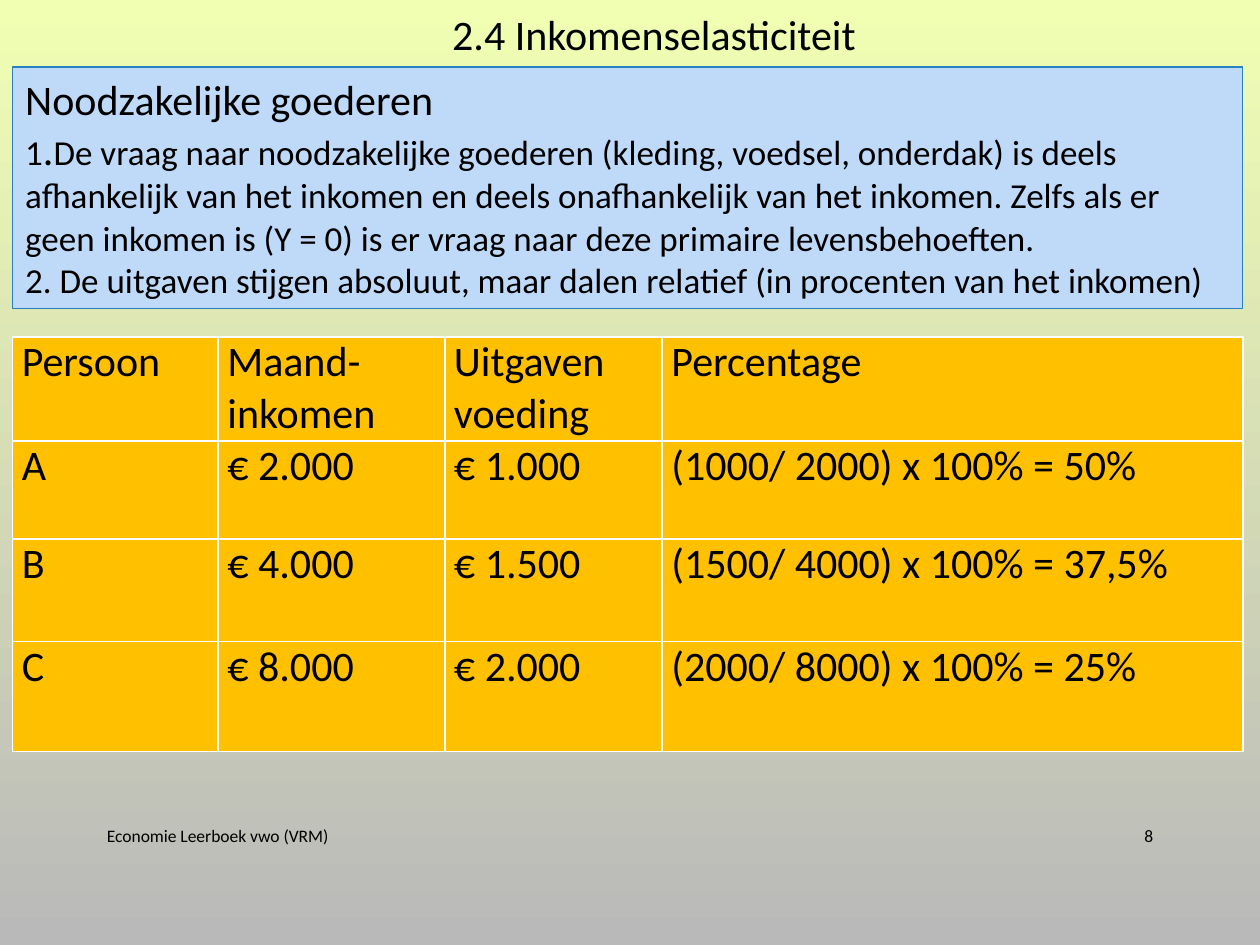
import pptx
import pptx.util
import pptx.dml.color
import pptx.enum.text
import pptx.oxml.ns
import lxml.etree

Pt = pptx.util.Pt
RGBColor = pptx.dml.color.RGBColor
Align = pptx.enum.text.PP_ALIGN
Anchor = pptx.enum.text.MSO_ANCHOR
qn = pptx.oxml.ns.qn

FONT = "Calibri"
BLACK = RGBColor(0x00, 0x00, 0x00)
WHITE = RGBColor(0xFF, 0xFF, 0xFF)
BACKGROUND_TOP = RGBColor(0xF1, 0xFF, 0xB3)
BACKGROUND_BOTTOM = RGBColor(0xB9, 0xB9, 0xB9)
BOX_FILL = RGBColor(0xBF, 0xDA, 0xF9)
BOX_LINE = RGBColor(0x26, 0x83, 0xBF)
CELL_FILL = RGBColor(0xFF, 0xC0, 0x00)

COLUMN_WIDTHS = [117.5, 129.5, 124.25, 332]
ROW_HEIGHTS = [59.5, 56, 58.5, 63]
ROWS = [
    ["Persoon", "Maand-inkomen", "Uitgaven voeding", "Percentage"],
    ["A", "€ 2.000", "€ 1.000", "(1000/ 2000) x 100% = 50%"],
    ["B", "€ 4.000", "€ 1.500", "(1500/ 4000) x 100% = 37,5%"],
    ["C", "€ 8.000", "€ 2.000", "(2000/ 8000) x 100% = 25%"],
]


def place(shape, left, top, width, height):
    shape.left, shape.top = Pt(left), Pt(top)
    shape.width, shape.height = Pt(width), Pt(height)


def format_run(run, size):
    run.font.name = FONT
    run.font.size = Pt(size)
    run.font.color.rgb = BLACK


def add_run(paragraph, text, size):
    run = paragraph.add_run()
    run.text = text
    format_run(run, size)


def paint_background(slide):
    fill = slide.background.fill
    fill.gradient()
    fill.gradient_angle = 270
    for stop, color, position in zip(
        fill.gradient_stops, (BACKGROUND_TOP, BACKGROUND_BOTTOM), (0, 1)
    ):
        stop.color.rgb = color
        stop.position = position


def fill_title(title, left, top, width, height):
    place(title, left, top, width, height)
    text_frame = title.text_frame
    text_frame.text = "2.4 Inkomenselasticiteit"
    text_frame.vertical_anchor = Anchor.TOP
    text_frame.auto_size = pptx.enum.text.MSO_AUTO_SIZE.NONE
    paragraph = text_frame.paragraphs[0]
    paragraph.alignment = Align.LEFT
    format_run(paragraph.runs[0], 24)


def fill_explanation(body, left, top, width, height):
    place(body, left, top, width, height)
    body.fill.solid()
    body.fill.fore_color.rgb = BOX_FILL
    body.line.color.rgb = BOX_LINE
    body.line.width = Pt(0.75)
    text_frame = body.text_frame
    text_frame.auto_size = pptx.enum.text.MSO_AUTO_SIZE.NONE
    first = text_frame.paragraphs[0]
    second = text_frame.add_paragraph()
    for paragraph in (first, second):
        properties = paragraph._p.get_or_add_pPr()
        properties.set("marL", "0")
        properties.set("indent", "0")
        lxml.etree.SubElement(properties, qn("a:buNone"))
        paragraph.space_before = Pt(0)
    add_run(first, "Noodzakelijke goederen", 24)
    first.add_line_break()
    add_run(first, "1", 20)
    add_run(first, ".", 24)
    add_run(
        first,
        "De vraag naar noodzakelijke goederen (kleding, voedsel, onderdak) is deels "
        "afhankelijk van het inkomen en deels onafhankelijk van het inkomen. Zelfs als er "
        "geen inkomen is (Y = 0) is er vraag naar deze primaire levensbehoeften.",
        20,
    )
    add_run(
        second,
        "2. De uitgaven stijgen absoluut, maar dalen relatief (in procenten van het inkomen)",
        20,
    )


def add_cell_borders(cell):
    properties = cell._tc.get_or_add_tcPr()
    for side in ("a:lnL", "a:lnR", "a:lnT", "a:lnB"):
        line = lxml.etree.SubElement(properties, qn(side), w=str(Pt(1)))
        fill = lxml.etree.SubElement(line, qn("a:solidFill"))
        lxml.etree.SubElement(fill, qn("a:srgbClr"), val=str(WHITE))


def format_cell(cell, text):
    add_cell_borders(cell)
    cell.fill.solid()
    cell.fill.fore_color.rgb = CELL_FILL
    cell.margin_left = cell.margin_right = Pt(5.25)
    cell.margin_top = cell.margin_bottom = Pt(0)
    cell.text_frame.text = text
    run = cell.text_frame.paragraphs[0].runs[0]
    format_run(run, 24)
    run.font.bold = False


def add_spending_table(slide, left, top):
    table = slide.shapes.add_table(
        len(ROWS), len(COLUMN_WIDTHS), Pt(left), Pt(top),
        Pt(sum(COLUMN_WIDTHS)), Pt(sum(ROW_HEIGHTS)),
    ).table
    table.first_row = False
    table.horz_banding = False
    for column, width in zip(table.columns, COLUMN_WIDTHS):
        column.width = Pt(width)
    for row, height, texts in zip(table.rows, ROW_HEIGHTS, ROWS):
        row.height = Pt(height)
        for cell, text in zip(row.cells, texts):
            format_cell(cell, text)


def add_footer_text(slide, text, alignment, left, top, width, height):
    box = slide.shapes.add_textbox(Pt(left), Pt(top), Pt(width), Pt(height))
    text_frame = box.text_frame
    text_frame.word_wrap = True
    text_frame.vertical_anchor = Anchor.MIDDLE
    text_frame.text = text
    paragraph = text_frame.paragraphs[0]
    paragraph.alignment = alignment
    format_run(paragraph.runs[0], 10)


def main():
    presentation = pptx.Presentation()
    presentation.slide_width = Pt(720)
    presentation.slide_height = Pt(540)
    slide = presentation.slides.add_slide(presentation.slide_layouts[1])
    paint_background(slide)
    add_footer_text(slide, "Economie Leerboek vwo (VRM)", Align.LEFT, 54, 463, 394, 29)
    add_footer_text(slide, "8", Align.RIGHT, 620.5, 463, 45.5, 29)
    add_spending_table(slide, 7.2, 192.5)
    fill_explanation(slide.placeholders[1], 7.2, 38.2, 703, 138)
    fill_title(slide.shapes.title, 251.2, 1.5, 270, 36)
    presentation.save("out.pptx")


if __name__ == "__main__":
    main()
